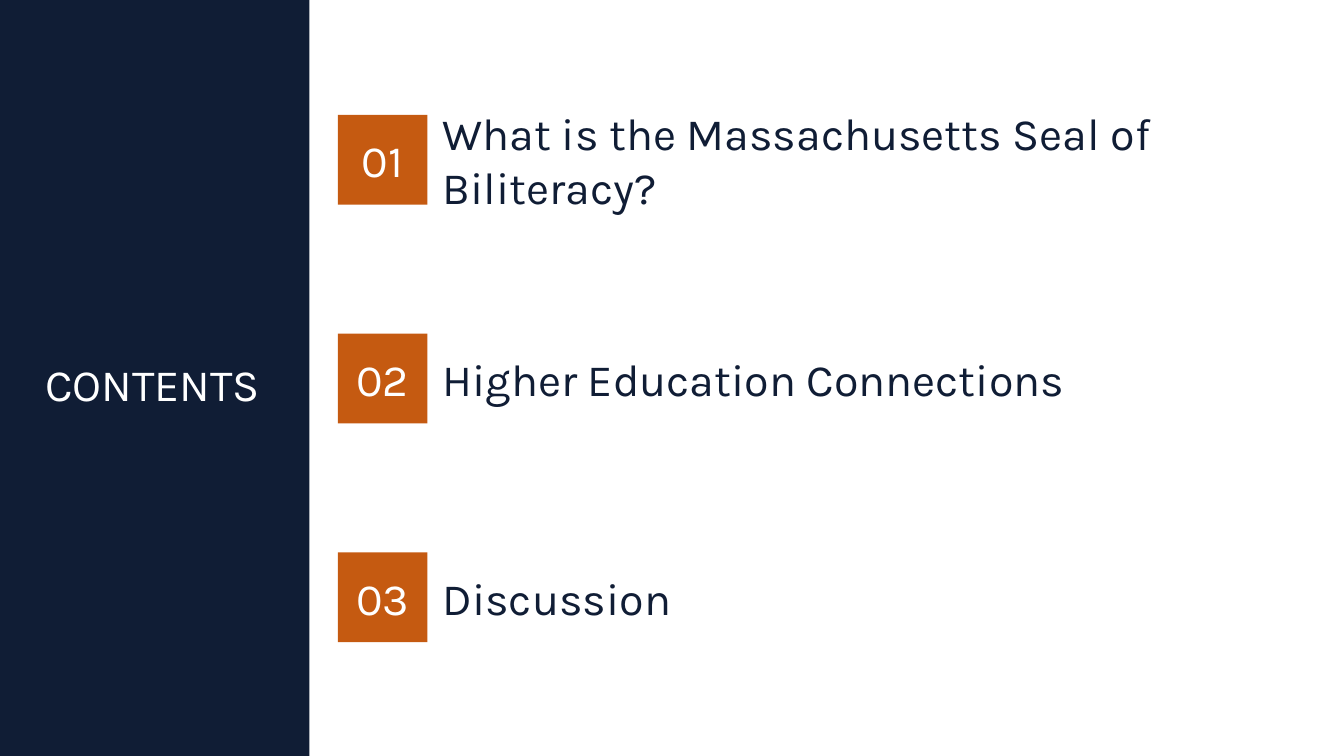
from pptx import Presentation
from pptx.dml.color import RGBColor
from pptx.enum.text import MSO_ANCHOR, PP_ALIGN
from pptx.enum.shapes import MSO_SHAPE
from pptx.util import Pt

EMU_PER_PX = 9144  # 100 px to the inch
PAGE_WIDTH, PAGE_HEIGHT = 1333, 750
COLOURS = {"navy": "101D35", "orange": "C55A11", "white": "FFFFFF"}

TOPICS = [
    "What is the Massachusetts Seal of Biliteracy?",
    "Higher Education Connections",
    "Discussion",
]
FIRST_TOP, TOPIC_STEP = 114, 217
BADGE_LEFT, BADGE_SIZE = 335, 89
TOPIC_LEFT, TOPIC_WIDTH = 429, 873


def px(*lengths):
    return [length * EMU_PER_PX for length in lengths]


def colour(name):
    return RGBColor.from_string(COLOURS[name])


def write(box, text, colour_name, align, anchor):
    frame = box.text_frame
    frame.word_wrap = True
    frame.vertical_anchor = anchor
    para = frame.paragraphs[0]
    para.text = text
    para.alignment = align
    para.font.name = "Karla"
    para.font.size = Pt(32)
    para.font.color.rgb = colour(colour_name)


def add_block(shapes, place, fill):
    block = shapes.add_shape(MSO_SHAPE.RECTANGLE, *px(*place))
    block.shadow.inherit = False
    block.fill.solid()
    block.fill.fore_color.rgb = colour(fill)
    block.line.fill.background()
    return block


def add_label(shapes, place, text, colour_name, align, anchor):
    box = shapes.add_textbox(*px(*place))
    write(box, text, colour_name, align, anchor)


def add_topic(page, number, text):
    top = FIRST_TOP + (number - 1) * TOPIC_STEP
    shapes = page.shapes.add_group_shape().shapes
    badge = add_block(shapes, (BADGE_LEFT, top, BADGE_SIZE, BADGE_SIZE), "orange")
    write(badge, f"{number:02d}", "white", PP_ALIGN.CENTER, MSO_ANCHOR.MIDDLE)
    add_label(shapes, (TOPIC_LEFT, top, TOPIC_WIDTH, BADGE_SIZE), text,
              "navy", PP_ALIGN.LEFT, MSO_ANCHOR.MIDDLE)


def main():
    deck = Presentation()
    deck.slide_width, deck.slide_height = px(PAGE_WIDTH, PAGE_HEIGHT)
    page = deck.slides.add_slide(deck.slide_layouts[6])

    # Side panel with the heading
    add_block(page.shapes, (0, 0, 307, PAGE_HEIGHT), "navy")
    add_label(page.shapes, (0, 349, 303, 64), "CONTENTS",
              "white", PP_ALIGN.CENTER, MSO_ANCHOR.TOP)

    # Numbered topics
    for number, text in enumerate(TOPICS, start=1):
        add_topic(page, number, text)

    deck.save("out.pptx")


if __name__ == "__main__":
    main()
